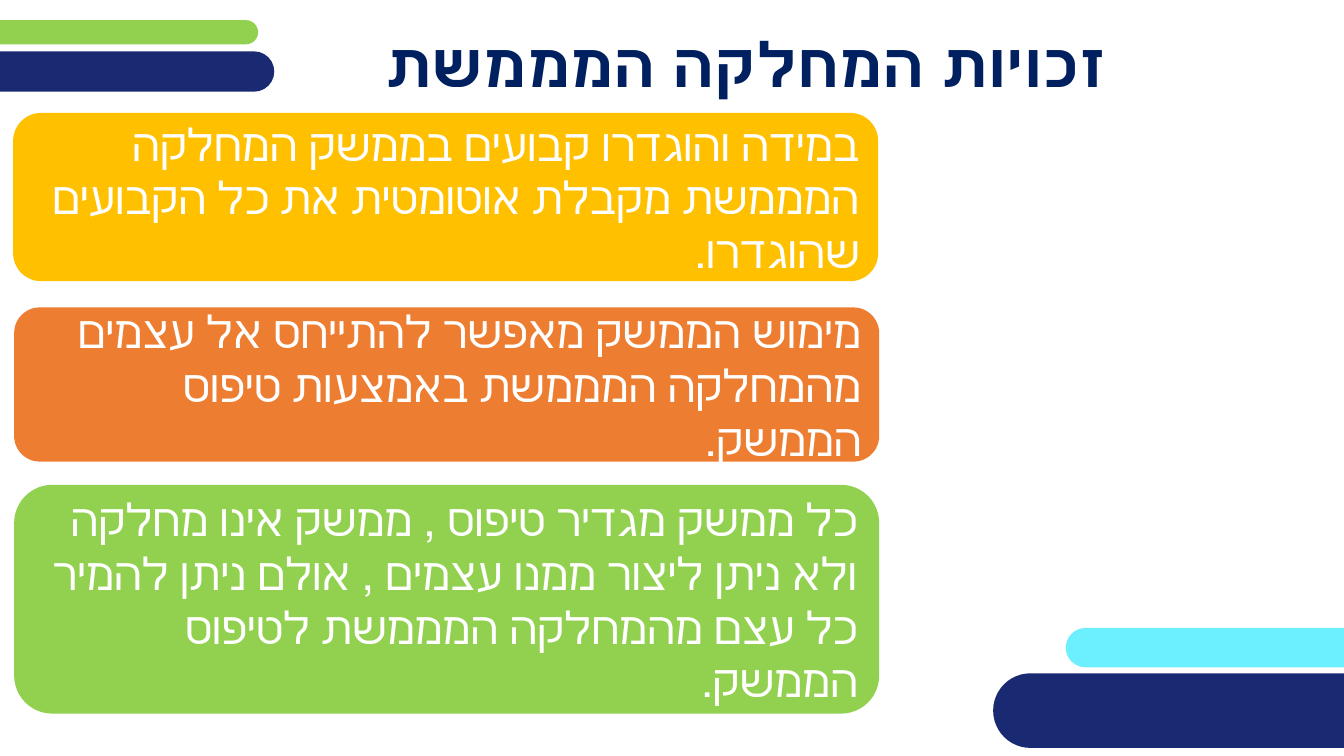
from pptx import Presentation
from pptx.dml.color import RGBColor
from pptx.enum.shapes import MSO_SHAPE
from pptx.enum.text import MSO_ANCHOR, PP_ALIGN
from pptx.util import Inches, Pt

ROUNDED = MSO_SHAPE.ROUNDED_RECTANGLE
CARD = MSO_SHAPE.FLOWCHART_ALTERNATE_PROCESS
MIDDLE = MSO_ANCHOR.MIDDLE
RIGHT = PP_ALIGN.RIGHT

WHITE = RGBColor(0xFF, 0xFF, 0xFF)
NAVY = RGBColor(0x19, 0x2A, 0x72)
TITLE_BLUE = RGBColor(0x00, 0x20, 0x60)
CYAN = RGBColor(0x6C, 0xF0, 0xFF)
GREEN = RGBColor(0x92, 0xD0, 0x50)
ORANGE = RGBColor(0xED, 0x7D, 0x31)
AMBER = RGBColor(0xFF, 0xC0, 0x00)

BARS = [
    (10.57, 6.23, 5.21, 0.39, CYAN),
    (-0.28, 0.2, 2.84, 0.24, GREEN),
    (-0.53, 0.51, 3.25, 0.4, NAVY),
    (9.85, 6.68, 4.11, 0.74, NAVY),
]
RIGHTS = [
    (0.13, 1.12, 1.67, AMBER,
     "במידה והוגדרו קבועים בממשק המחלקה המממשת מקבלת אוטומטית את כל הקבועים שהוגדרו."),
    (0.14, 3.05, 1.53, ORANGE,
     "מימוש הממשק מאפשר להתייחס אל עצמים מהמחלקה המממשת באמצעות טיפוס הממשק."),
    (0.14, 4.81, 2.27, GREEN,
     "כל ממשק מגדיר טיפוס , ממשק אינו מחלקה ולא ניתן ליצור ממנו עצמים , "
     "אולם ניתן להמיר כל עצם מהמחלקה המממשת לטיפוס הממשק."),
]
CARD_WIDTH = 8.58


class HebrewSlide:
    title_font = "League Spartan"
    body_font = "TeX Gyre Pagella"

    def __init__(self, slide):
        self.slide = slide

    def _write(self, shape, text, font_name, size, color, bold=False):
        """Fill a shape with one right-to-left paragraph."""
        frame = shape.text_frame
        frame.word_wrap = True
        frame.vertical_anchor = MIDDLE
        frame.text = text
        paragraph = frame.paragraphs[0]
        paragraph.alignment = RIGHT
        paragraph._p.get_or_add_pPr().set("rtl", "1")
        run = paragraph.runs[0]
        run.font.name = font_name
        run.font.size = Pt(size)
        run.font.bold = bold
        run.font.color.rgb = color
        run._r.get_or_add_rPr().set("lang", "he-IL")

    def _solid(self, kind, left, top, width, height, color):
        shape = self.slide.shapes.add_shape(
            kind, Inches(left), Inches(top), Inches(width), Inches(height))
        shape.shadow.inherit = False
        shape.fill.solid()
        shape.fill.fore_color.rgb = color
        shape.line.fill.background()
        return shape

    def bar(self, left, top, width, height, color):
        bar = self._solid(ROUNDED, left, top, width, height, color)
        bar.adjustments[0] = 0.5

    def title(self, text, left, top, width, height):
        title = self.slide.shapes.add_textbox(
            Inches(left), Inches(top), Inches(width), Inches(height))
        self._write(title, text, self.title_font, 44, TITLE_BLUE, bold=True)

    def card(self, left, top, width, height, color, text):
        card = self._solid(CARD, left, top, width, height, color)
        self._write(card, text, self.body_font, 32, WHITE)


def main():
    presentation = Presentation()
    presentation.slide_width = Inches(13.33)
    presentation.slide_height = Inches(7.5)
    page = HebrewSlide(presentation.slides.add_slide(presentation.slide_layouts[6]))
    for bar in BARS:
        page.bar(*bar)
    page.title("זכויות המחלקה המממשת", 0, 0.23, 11.08, 0.79)
    for left, top, height, color, text in RIGHTS:
        page.card(left, top, CARD_WIDTH, height, color, text)
    presentation.save("out.pptx")


if __name__ == "__main__":
    main()
